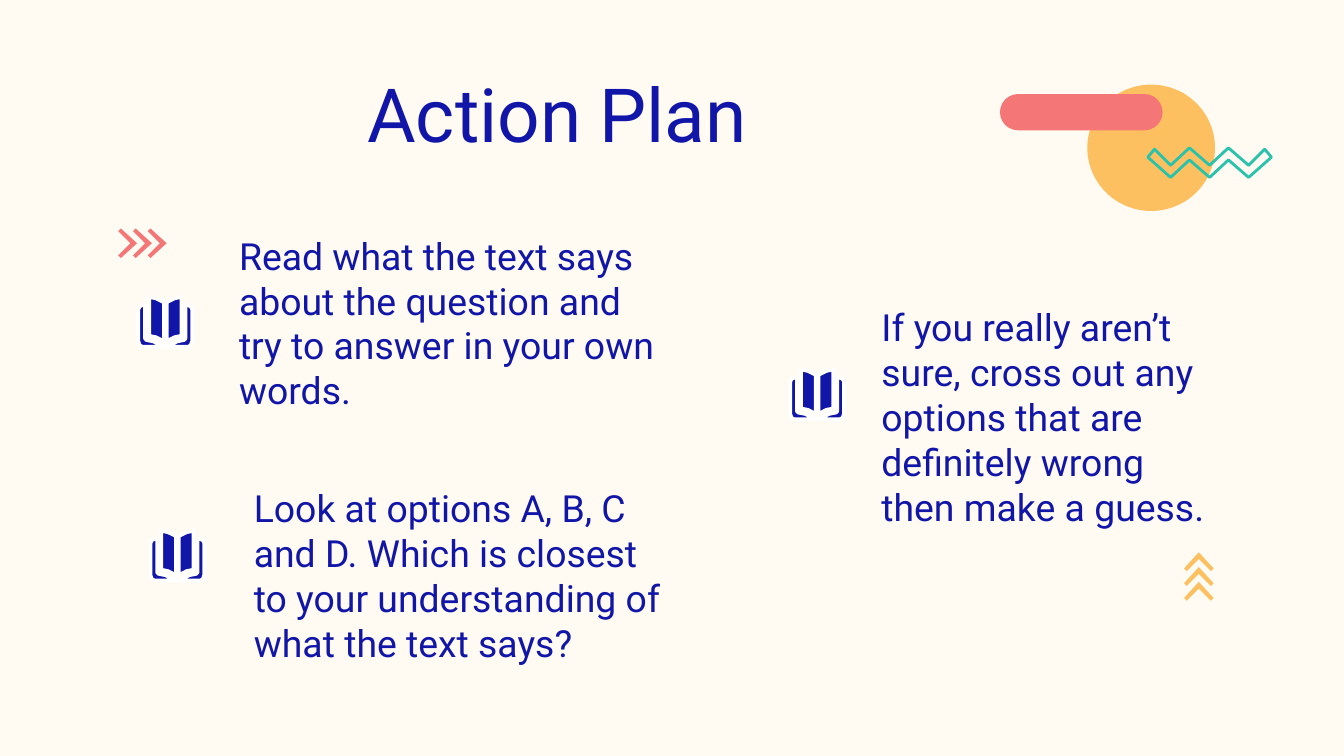
from pptx import Presentation
from pptx.dml.color import RGBColor
from pptx.enum.shapes import MSO_SHAPE as SHAPE
from pptx.enum.text import MSO_ANCHOR as ANCHOR, PP_ALIGN as ALIGN
from pptx.util import Inches, Pt

NAVY, CORAL, AMBER, TEAL = "1116A8", "F57676", "FDC061", "29C2AA"


def rgb(value):
    return RGBColor.from_string(value)


def add_outline(points, fill=None, line=None, width=2):
    """Closed polygon through points given in inches."""
    points = [(Inches(x), Inches(y)) for x, y in points]
    fb = s.shapes.build_freeform(*points[0])
    fb.add_line_segments(points[1:], close=True)
    sp = fb.convert_to_shape()
    sp.shadow.inherit = False
    if fill:
        sp.fill.solid()
        sp.fill.fore_color.rgb = rgb(fill)
    else:
        sp.fill.background()
    if line:
        sp.line.color.rgb = rgb(line)
        sp.line.width = Pt(width)
    else:
        sp.line.fill.background()


# Slide in 16:9
prs = Presentation()
prs.slide_width, prs.slide_height = Inches(10), Inches(10 * 9 / 16)
s = prs.slides.add_slide(prs.slide_layouts[5])
s.background.fill.solid()
s.background.fill.fore_color.rgb = rgb("FFFAF2")

# Corner decoration: circle, pill and zigzag
for kind, color, box in [
    (SHAPE.OVAL, AMBER, (8.09, 0.63, 0.95, 0.94)),
    (SHAPE.ROUNDED_RECTANGLE, CORAL, (7.44, 0.7, 1.21, 0.27)),
]:
    sp = s.shapes.add_shape(kind, *[Inches(v) for v in box])
    sp.shadow.inherit = False
    sp.fill.solid()
    sp.fill.fore_color.rgb = rgb(color)
    sp.line.fill.background()
    if kind == SHAPE.ROUNDED_RECTANGLE:
        sp.adjustments[0] = 0.5

add_outline([(8.59, 1.11), (8.71, 1.23), (8.85, 1.1), (9, 1.23), (9.14, 1.1),
             (9.29, 1.23), (9.41, 1.11), (9.46, 1.17), (9.29, 1.32),
             (9.14, 1.19), (9, 1.32), (8.85, 1.19), (8.71, 1.32), (8.54, 1.17)],
            line=TEAL, width=1.5)

# Title and the three steps; the last number is the bottom inset
steps = [
    ("Read what the text says about the question and try to answer in your own words.",
     (1.68, 1.44, 3.41, 1.92), 0.1),
    ("If you really aren’t sure, cross out any options that are definitely wrong then make a guess.",
     (6.46, 2.84, 2.75, 0.52), 0.1),
    ("Look at options A, B, C and D. Which is closest to your understanding of what the text says?",
     (1.79, 3.85, 3.3, 1.19), 0.43),
]
title = s.shapes.title
texts = [(title, "Action Plan", (0.79, 0.58, 6.71, 0.52), 0.1, 40, ALIGN.CENTER)]
for text, box, bottom in steps:
    sp = s.shapes.add_textbox(0, 0, 0, 0)
    texts.append((sp, text, box, bottom, 20, ALIGN.LEFT))

for sp, text, box, bottom, size, align in texts:
    sp.left, sp.top, sp.width, sp.height = [Inches(v) for v in box]
    tf = sp.text_frame
    tf.text = text
    tf.word_wrap = True
    tf.vertical_anchor = ANCHOR.MIDDLE
    tf.margin_left = tf.margin_right = tf.margin_top = Inches(0.1)
    tf.margin_bottom = Inches(bottom)
    p = tf.paragraphs[0]
    p.alignment = align
    font = p.runs[0].font
    font.name, font.size = "Roboto", Pt(size)
    font.color.rgb = rgb(NAVY)

# Chevrons: three pointing right, three pointing up
chevron = [(0.02, 0.22), (0.14, 0.11), (0.02, 0), (0, 0.02), (0.09, 0.11), (0, 0.2)]
for i in range(3):
    step = 0.11 * i
    add_outline([(0.88 + step + x, 1.7 + y) for x, y in chevron], CORAL)
    add_outline([(8.81 + y, 4.25 + step - x) for x, y in chevron], AMBER)

# Open books: right half of cover and page, mirrored about the spine
cover = [(0.15, 0.06), (0.15, 0.31), (0.14, 0.32), (0.09, 0.33), (0.03, 0.36),
         (0, 0.37), (0.17, 0.37), (0.19, 0.36), (0.2, 0.33), (0.2, 0.09),
         (0.19, 0.07), (0.17, 0.06)]
page = [(0.12, 0), (0.07, 0.01), (0.01, 0.04), (0.01, 0.33), (0.07, 0.3), (0.12, 0.29)]
for spine, top in [(1.23, 2.21), (1.32, 3.95), (6.08, 2.75)]:
    for part in (cover, page):
        for side in (1, -1):
            add_outline([(spine + side * x, top + y) for x, y in part], NAVY, "FFFFFF")

prs.save("out.pptx")
